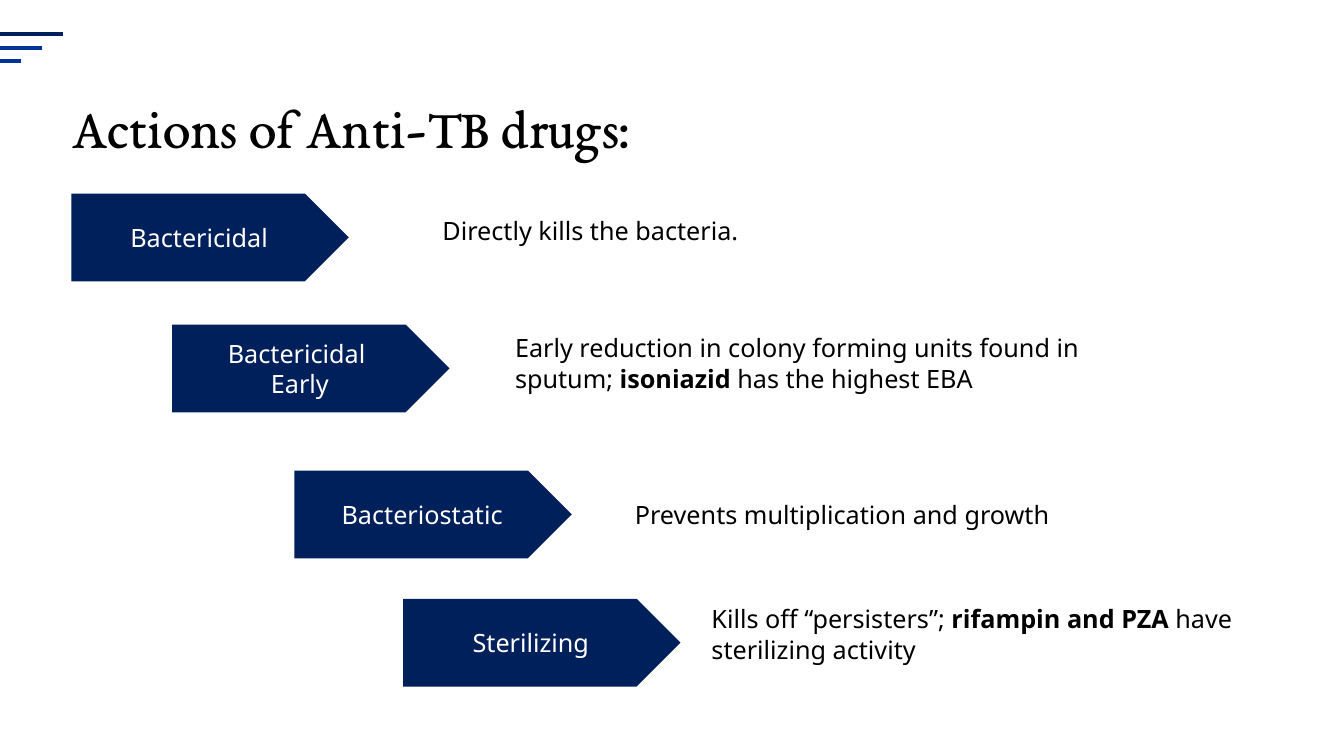
from dataclasses import dataclass

from lxml import etree
from pptx import Presentation
from pptx.dml.color import RGBColor
from pptx.enum.shapes import MSO_CONNECTOR, MSO_SHAPE
from pptx.enum.text import MSO_ANCHOR, MSO_AUTO_SIZE, PP_ALIGN
from pptx.oxml.ns import qn
from pptx.util import Cm, Pt

STRAIGHT = MSO_CONNECTOR.STRAIGHT
PENTAGON = MSO_SHAPE.PENTAGON
BOTTOM = MSO_ANCHOR.BOTTOM
MIDDLE = MSO_ANCHOR.MIDDLE
NO_AUTO_SIZE = MSO_AUTO_SIZE.NONE
CENTER = PP_ALIGN.CENTER
LEFT = PP_ALIGN.LEFT
TITLE_ONLY = 5


@dataclass(frozen=True)
class Theme:
    navy: RGBColor = RGBColor(0x00, 0x20, 0x5B)
    blue: RGBColor = RGBColor(0x00, 0x33, 0x99)
    black: RGBColor = RGBColor(0, 0, 0)
    white: RGBColor = RGBColor(255, 255, 255)
    title_font: str = "EB Garamond"
    body_font: str = "Noto Sans"
    title_size: Pt = Pt(40)
    body_size: Pt = Pt(18)
    line_width: Pt = Pt(3)


THEME = Theme()
ARROW_WIDTH, ARROW_HEIGHT = Cm(6.99), Cm(2.21)

CORNER_LINES = [
    (1.6, 0.86, THEME.navy),
    (1.07, 1.2, THEME.blue),
    (0.53, 1.53, THEME.blue),
]

ACTIONS = [
    (["Bactericidal"], (1.8, 4.88), (10.9, 5.31, 11.94, 1.02),
     [("Directly kills the bacteria.", False)]),
    (["Bactericidal ", "Early"], (4.34, 8.18), (12.73, 8.26, 14.96, 1.8),
     [("Early reduction in colony forming units found in sputum; ", False),
      ("isoniazid", True), (" has the highest EBA", False)]),
    (["Bacteriostatic"], (7.42, 11.86), (15.75, 12.45, 11.94, 1.02),
     [("Prevents multiplication and growth", False)]),
    (["Sterilizing"], (10.16, 15.09), (17.68, 15.09, 14.78, 1.8),
     [("Kills off “persisters”; ", False), ("rifampin and PZA ", True),
      ("have sterilizing activity", False)]),
]


def style_font(font, name, size, color):
    font.name = name
    font.size = size
    font.color.rgb = color


def add_corner_line(slide, length, top, color):
    line = slide.shapes.add_connector(STRAIGHT, Cm(length), Cm(top), Cm(0), Cm(top))
    line.line.color.rgb = color
    line.line.width = THEME.line_width
    etree.SubElement(line._element.spPr, qn("a:effectLst"))


def set_title(slide, text):
    title = slide.shapes.title
    title.left, title.top = Cm(1.8), Cm(2.51)
    title.width, title.height = Cm(30.66), Cm(1.55)
    frame = title.text_frame
    frame.text = text
    frame.word_wrap = True
    frame.auto_size = NO_AUTO_SIZE
    frame.vertical_anchor = BOTTOM
    frame.margin_left = frame.margin_right = Cm(0)
    frame.margin_top = frame.margin_bottom = Cm(0)
    paragraph = frame.paragraphs[0]
    paragraph.alignment = LEFT
    paragraph.line_spacing = 0.9
    style_font(paragraph.font, THEME.title_font, THEME.title_size, THEME.black)


def add_action_arrow(slide, left, top, lines):
    arrow = slide.shapes.add_shape(PENTAGON, Cm(left), Cm(top), ARROW_WIDTH, ARROW_HEIGHT)
    arrow.shadow.inherit = False
    arrow.fill.solid()
    arrow.fill.fore_color.rgb = THEME.navy
    arrow.line.fill.background()
    frame = arrow.text_frame
    frame.text = "\n".join(lines)
    frame.word_wrap = True
    frame.vertical_anchor = MIDDLE
    for paragraph in frame.paragraphs:
        paragraph.alignment = CENTER
        style_font(paragraph.font, THEME.body_font, THEME.body_size, THEME.white)


def add_description(slide, box, runs):
    shape = slide.shapes.add_textbox(*(Cm(length) for length in box))
    shape.text_frame.word_wrap = True
    paragraph = shape.text_frame.paragraphs[0]
    style_font(paragraph.font, THEME.body_font, THEME.body_size, THEME.black)
    for text, bold in runs:
        run = paragraph.add_run()
        run.text = text
        run.font.bold = bold


def main():
    presentation = Presentation()
    presentation.slide_width, presentation.slide_height = Cm(33.87), Cm(19.05)
    slide = presentation.slides.add_slide(presentation.slide_layouts[TITLE_ONLY])
    slide.background.fill.solid()
    slide.background.fill.fore_color.rgb = THEME.white

    for length, top, color in CORNER_LINES:
        add_corner_line(slide, length, top, color)
    set_title(slide, "Actions of Anti-TB drugs:")
    for lines, (left, top), box, runs in ACTIONS:
        add_action_arrow(slide, left, top, lines)
        add_description(slide, box, runs)

    presentation.save("out.pptx")


if __name__ == "__main__":
    main()
